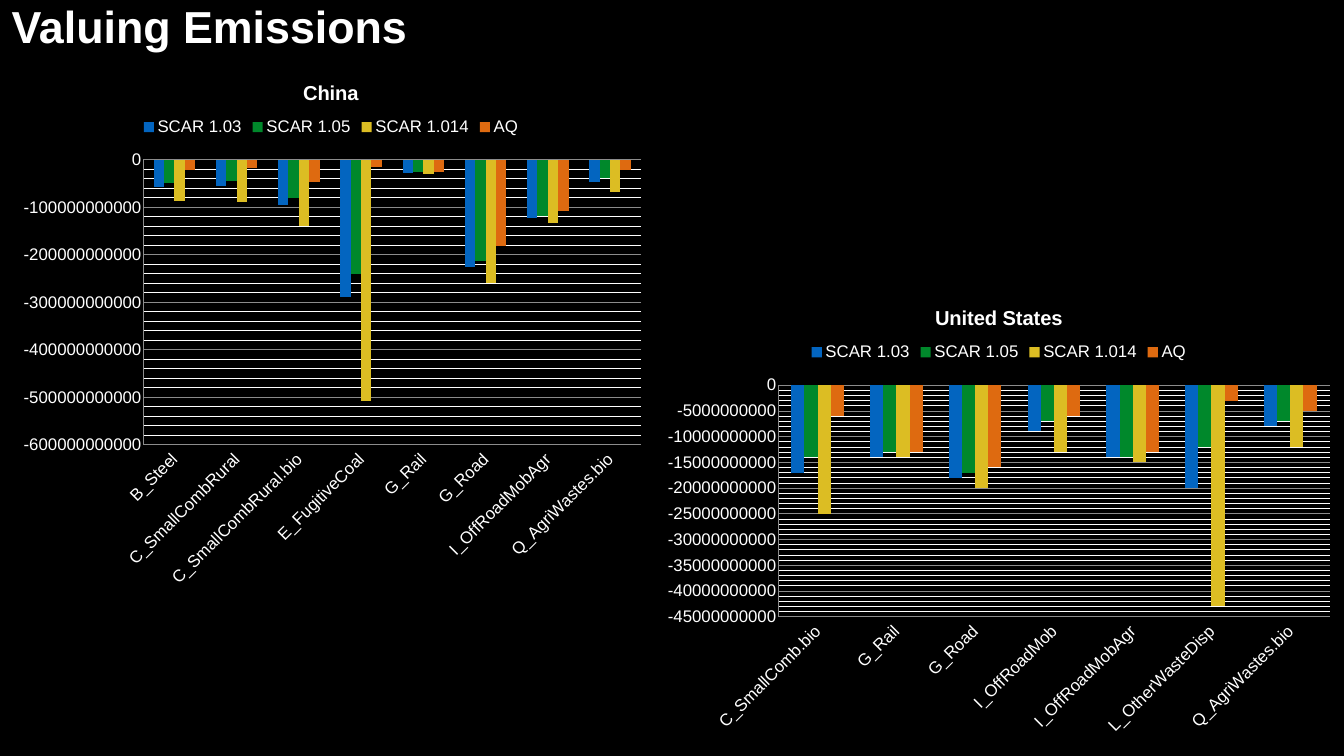
import pptx
import pptx.chart.data
import pptx.dml.color
import pptx.enum.chart
import pptx.enum.text
import pptx.oxml
import pptx.oxml.ns
import pptx.util

Inches, Pt = pptx.util.Inches, pptx.util.Pt
FONT = "Arial"
WHITE, GREY, BLACK = "FFFFFF", "8C8C8C", "000000"
BILLION = 10 ** 9
SERIES_COLOURS = {"SCAR 1.03": "0365C0", "SCAR 1.05": "00882B",
                  "SCAR 1.014": "DCBD23", "AQ": "DE6A10"}

# Values are in billions, in the order of SERIES_COLOURS.
CHINA = {
    "B_Steel": (-58, -48, -86, -22),
    "C_SmallCombRural": (-55, -44, -88, -17),
    "C_SmallCombRural.bio": (-95, -80, -140, -46),
    "E_FugitiveCoal": (-288, -240, -507, -15),
    "G_Rail": (-27, -26, -29, -25),
    "G_Road": (-225, -213, -260, -181),
    "I_OffRoadMobAgr": (-123, -118, -133, -108),
    "Q_AgriWastes.bio": (-46, -38, -67, -21),
}
UNITED_STATES = {
    "C_SmallComb.bio": (-17, -14, -25, -6),
    "G_Rail": (-14, -13, -14, -13),
    "G_Road": (-18, -17, -20, -16),
    "I_OffRoadMob": (-9, -7, -13, -6),
    "I_OffRoadMobAgr": (-14, -14, -15, -13),
    "L_OtherWasteDisp": (-20, -12, -43, -3),
    "Q_AgriWastes.bio": (-8, -7, -12, -5),
}


def rgb(colour):
    return pptx.dml.color.RGBColor.from_string(colour)


def style_font(font, size, bold=False):
    font.name, font.size, font.bold = FONT, Pt(size), bold
    font.color.rgb = rgb(WHITE)


def style_line(line, colour):
    line.color.rgb = rgb(colour)
    line.width = Pt(1)


def add_heading(slide, box, text):
    heading = slide.shapes.title
    heading.left, heading.top, heading.width, heading.height = map(Inches, box)
    frame = heading.text_frame
    frame.margin_left = Inches(0.08)
    frame.margin_top = frame.margin_right = frame.margin_bottom = 0
    frame.vertical_anchor = pptx.enum.text.MSO_ANCHOR.BOTTOM
    frame.auto_size = pptx.enum.text.MSO_AUTO_SIZE.NONE
    paragraph = frame.paragraphs[0]
    paragraph.alignment = pptx.enum.text.PP_ALIGN.LEFT
    paragraph.line_spacing = 0.84
    run = paragraph.add_run()
    run.text = text
    style_font(run.font, 64, bold=True)


def place_plot(chart, plot_box):
    """Fix the inner plot area; plot_box holds fractions of the chart."""
    plot_area = chart.plots[0]._element.getparent()
    for old in plot_area.findall(pptx.oxml.ns.qn("c:layout")):
        plot_area.remove(old)
    sizes = "".join(f'<c:{key} val="{value}"/>' for key, value in zip("xywh", plot_box))
    plot_area.insert(0, pptx.oxml.parse_xml(
        f'<c:layout {pptx.oxml.ns.nsdecls("c")}><c:manualLayout>'
        '<c:layoutTarget val="inner"/><c:xMode val="edge"/><c:yMode val="edge"/>'
        f'{sizes}</c:manualLayout></c:layout>'))


def style_minor_gridlines(axis, colour):
    gridlines = axis._element.find(pptx.oxml.ns.qn("c:minorGridlines"))
    gridlines.append(pptx.oxml.parse_xml(
        f'<c:spPr {pptx.oxml.ns.nsdecls("c", "a")}><a:ln w="{Pt(1)}"><a:solidFill>'
        f'<a:srgbClr val="{colour}"/></a:solidFill></a:ln></c:spPr>'))


def style_axes(chart, minimum, major_unit):
    for axis in (chart.category_axis, chart.value_axis):
        axis.major_tick_mark = axis.minor_tick_mark = pptx.enum.chart.XL_TICK_MARK.NONE
        style_line(axis.format.line, GREY)
        style_font(axis.tick_labels.font, 24)

    sectors = chart.category_axis
    sectors.tick_label_position = pptx.enum.chart.XL_TICK_LABEL_POSITION.LOW
    body = sectors._element.find(".//" + pptx.oxml.ns.qn("a:bodyPr"))
    body.set("rot", "-2700000")
    body.set("vert", "horz")

    values = chart.value_axis
    values.minimum_scale, values.maximum_scale = minimum * BILLION, 0
    values.major_unit = major_unit * BILLION
    values.minor_unit = major_unit * BILLION / 5
    values.has_major_gridlines = values.has_minor_gridlines = True
    style_line(values.major_gridlines.format.line, GREY)
    style_minor_gridlines(values, WHITE)
    values.tick_labels.number_format = "0"
    values.tick_labels.number_format_is_linked = False


def add_emissions_chart(slide, box, country, sectors, minimum, major_unit, plot_box):
    data = pptx.chart.data.CategoryChartData()
    data.categories = list(sectors)
    for name, billions in zip(SERIES_COLOURS, zip(*sectors.values())):
        data.add_series(name, [value * BILLION for value in billions])
    chart = slide.shapes.add_chart(pptx.enum.chart.XL_CHART_TYPE.COLUMN_CLUSTERED,
                                   *map(Inches, box), data).chart
    style_font(chart.font, 24)

    chart.has_title = True
    run = chart.chart_title.text_frame.paragraphs[0].add_run()
    run.text = country
    style_font(run.font, 28.8, bold=True)
    chart.chart_title.include_in_layout = False

    chart.has_legend = True
    chart.legend.position = pptx.enum.chart.XL_LEGEND_POSITION.TOP
    chart.legend.include_in_layout = False
    style_font(chart.legend.font, 24)

    columns = chart.plots[0]
    columns.gap_width, columns.overlap = 199, 0
    columns.vary_by_categories = False
    for series in columns.series:
        series.invert_if_negative = False
        series.format.fill.solid()
        series.format.fill.fore_color.rgb = rgb(SERIES_COLOURS[series.name])

    style_axes(chart, minimum, major_unit)
    place_plot(chart, plot_box)


def main():
    deck = pptx.Presentation()
    deck.slide_width, deck.slide_height = Inches(26.67), Inches(15)
    slide = deck.slides.add_slide(deck.slide_layouts.get_by_name("Title Only"))
    slide.background.fill.solid()
    slide.background.fill.fore_color.rgb = rgb(BLACK)

    add_heading(slide, (0.15, 0.11, 19.6, 0.93), "Valuing Emissions")
    add_emissions_chart(slide, (0.15, 1.25, 12.83, 10.67), "China", CHINA,
                        -600, 100, (0.21, 0.18, 0.77, 0.53))
    add_emissions_chart(slide, (12.98, 5.75, 13.68, 9.01), "United States", UNITED_STATES,
                        -45, 5, (0.18, 0.21, 0.8, 0.51))
    deck.save("out.pptx")


if __name__ == "__main__":
    main()
